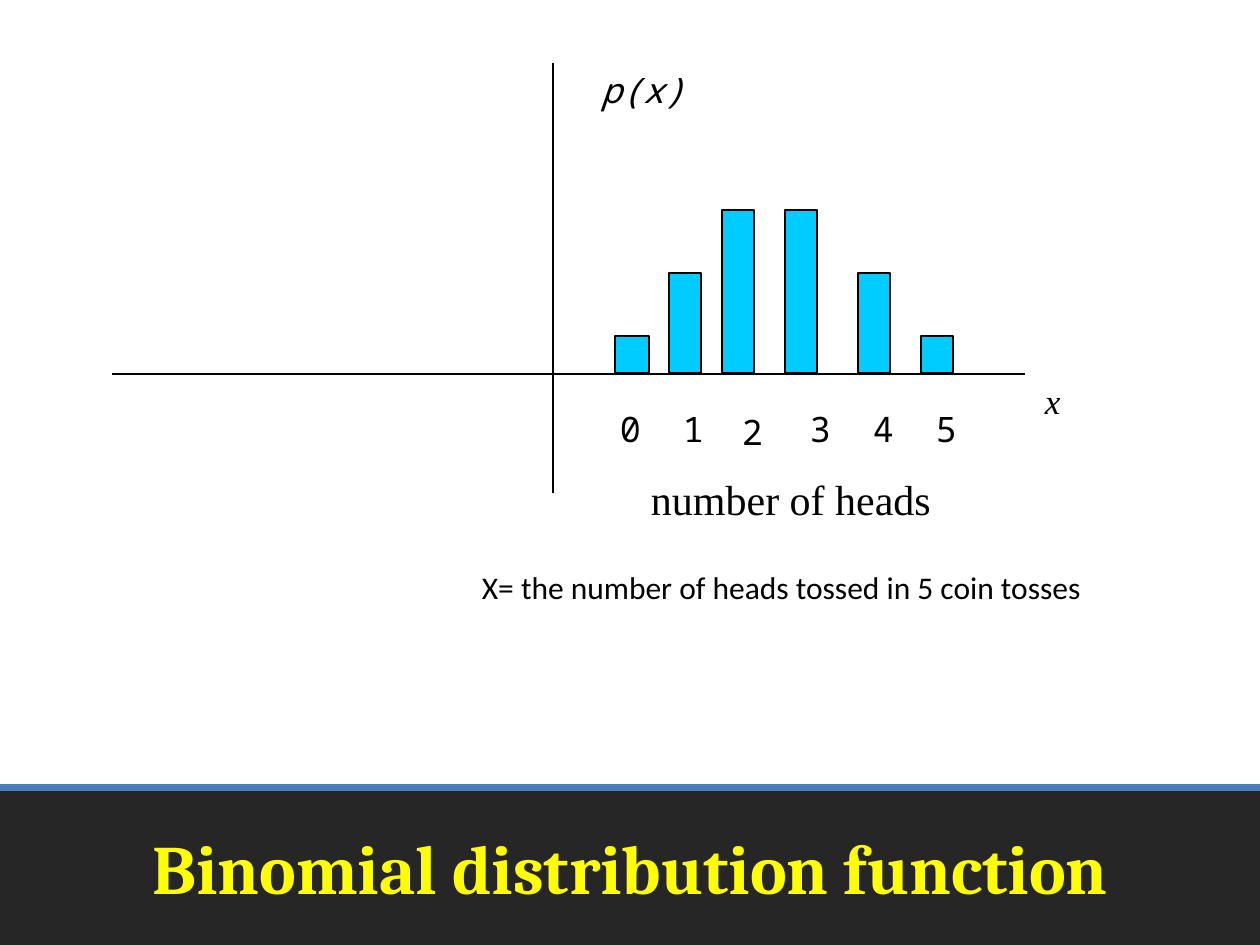
from pptx import Presentation
from pptx.dml.color import RGBColor as Rgb
from pptx.enum.shapes import MSO_CONNECTOR as Conn, MSO_SHAPE as Shape
from pptx.enum.text import MSO_ANCHOR as Anchor, PP_ALIGN as Align
from pptx.oxml.ns import qn
from pptx.util import Pt
from lxml.etree import SubElement

SCALE = 914400 / 126  # EMU in one px
COLORS = {
    "band": "262626",
    "rule": "4B7EBC",
    "bar": "00CCFF",
    "ink": "000000",
    "title": "FFFF00",
}
MONO, SERIF = "Noto Sans Mono", "Times New Roman"
PAD = (13, 6, 13, 6)


def emu(*sizes):
    return [round(size * SCALE) for size in sizes]


def rgb(name):
    return Rgb.from_string(COLORS[name])


class Board:
    def __init__(self, width, height):
        self.deck = Presentation()
        self.deck.slide_width, self.deck.slide_height = emu(width, height)
        self.slide = self.deck.slides.add_slide(self.deck.slide_layouts[6])

    def rect(self, box, fill, edge=None):
        shape = self.slide.shapes.add_shape(Shape.RECTANGLE, *emu(*box))
        shape.shadow.inherit = False
        shape.fill.solid()
        shape.fill.fore_color.rgb = rgb(fill)
        if edge:
            shape.line.color.rgb = rgb(edge)
            shape.line.width = Pt(0.75)
        else:
            shape.line.fill.background()

    def line(self, ends, color="ink", width=0.75):
        line = self.slide.shapes.add_connector(Conn.STRAIGHT, *emu(*ends))
        line.line.color.rgb = rgb(color)
        line.line.width = Pt(width)
        SubElement(line._element.spPr, qn("a:effectLst"))

    def text(self, words, box, font, size, color="ink", pad=PAD, wrap=True,
             bold=False, italic=False, align=Align.LEFT, anchor=Anchor.TOP):
        frame = self.slide.shapes.add_textbox(*emu(*box)).text_frame
        frame.text = words
        frame.word_wrap = wrap
        frame.vertical_anchor = anchor
        (frame.margin_left, frame.margin_top,
         frame.margin_right, frame.margin_bottom) = emu(*pad)
        para = frame.paragraphs[0]
        para.alignment = align
        face = para.runs[0].font
        face.name, face.size = font, Pt(size)
        face.bold, face.italic = bold, italic
        face.color.rgb = rgb(color)


def main():
    board = Board(1260, 945)

    # Title band
    board.rect((0, 788, 1260, 157), "band")
    board.line((0, 788, 1260, 788), "rule", 4)
    board.text("Binomial distribution function", (63, 788, 1134, 157),
               "Cambria", 39.6, "title", bold=True,
               align=Align.CENTER, anchor=Anchor.MIDDLE)

    # Bars, as left, width and height, all standing on one base
    base = 373
    bars = [(615, 34, 37), (669, 32, 100), (722, 32, 163),
            (785, 32, 163), (858, 32, 100), (921, 32, 37)]
    for left, width, height in bars:
        board.rect((left, base - height, width, height), "bar", "ink")

    # Axes and their names
    board.line((553, 63, 553, 493))
    board.line((112, 374, 1025, 374))
    board.text("p(x)", (588, 63, 150, 78), MONO, 20, italic=True)
    board.text("x", (1032, 374, 89, 78), SERIF, 20, italic=True)

    # Counts under the bars
    spots = [(620, 407), (683, 407), (742, 410),
             (810, 407), (873, 407), (936, 407)]
    for count, (left, top) in enumerate(spots):
        board.text(str(count), (left, top, 28, 44), MONO, 20, pad=(0, 0, 0, 0))

    # Captions
    board.text("number of heads", (638, 462, 420, 57), SERIF, 24,
               pad=(13, 11, 13, 0))
    board.text("X= the number of heads tossed in 5 coin tosses",
               (469, 562, 632, 50), "Calibri", 18, wrap=False)

    board.deck.save("out.pptx")


if __name__ == "__main__":
    main()
